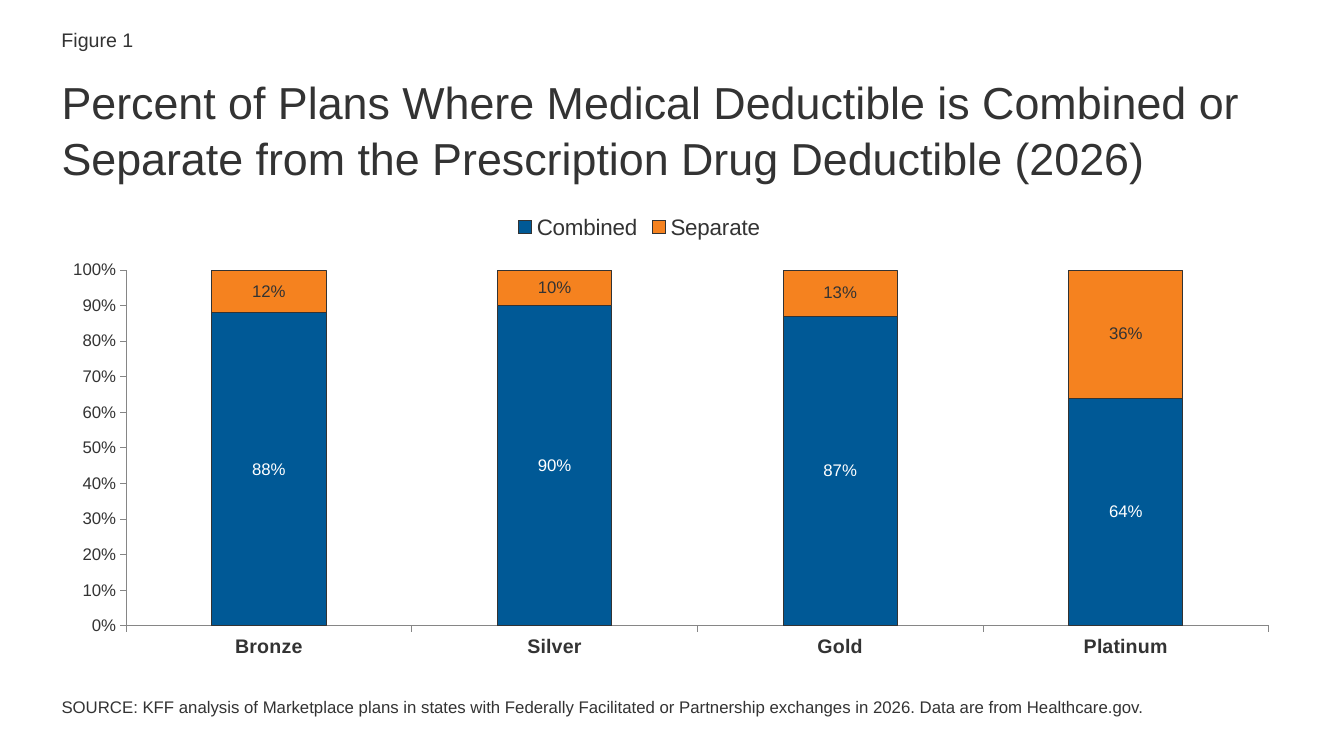
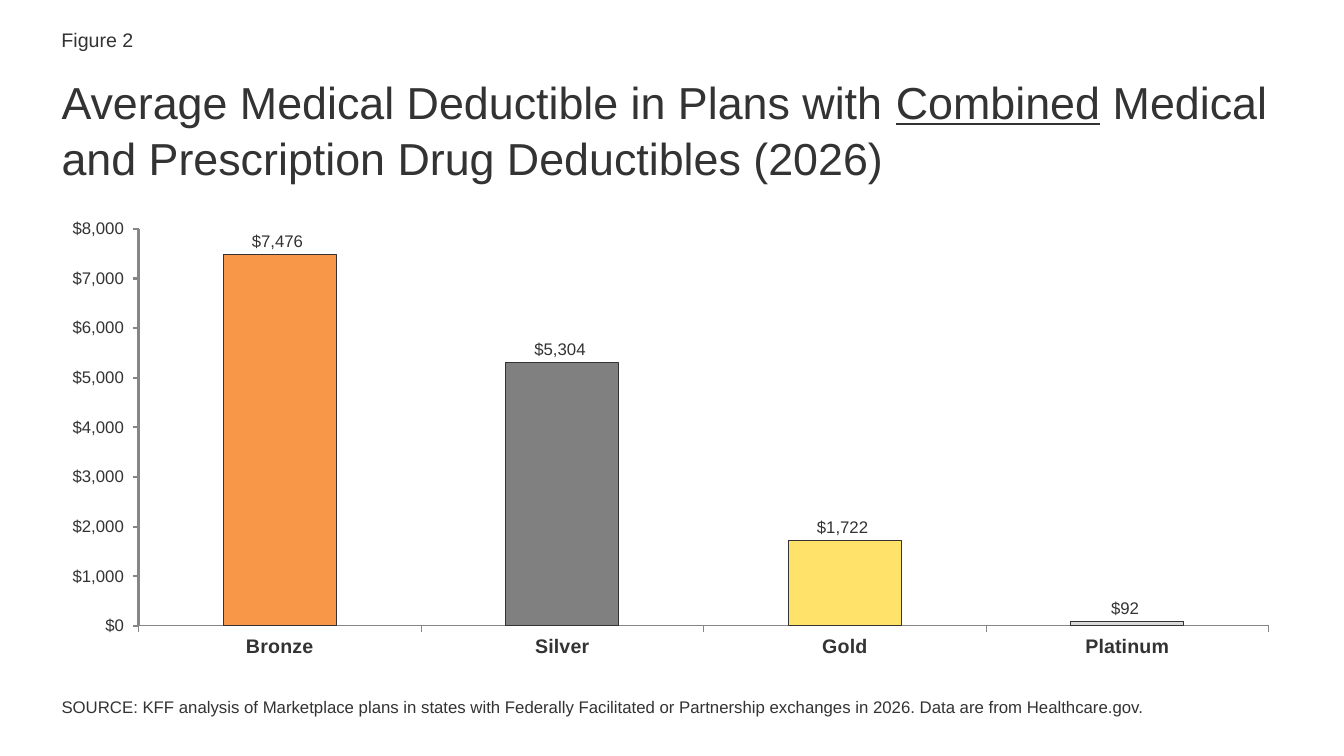
from pptx import Presentation
from pptx.chart.data import CategoryChartData
from pptx.dml.color import RGBColor
from pptx.enum.chart import XL_CHART_TYPE, XL_LABEL_POSITION, XL_LEGEND_POSITION, XL_TICK_MARK
from pptx.enum.text import MSO_ANCHOR, MSO_AUTO_SIZE, PP_ALIGN
from pptx.oxml.ns import qn
from pptx.oxml.xmlchemy import OxmlElement
from pptx.util import Cm, Pt

STACKED = XL_CHART_TYPE.COLUMN_STACKED_100
CLUSTERED = XL_CHART_TYPE.COLUMN_CLUSTERED
CENTER, ABOVE = XL_LABEL_POSITION.CENTER, XL_LABEL_POSITION.OUTSIDE_END
LEGEND_TOP = XL_LEGEND_POSITION.TOP
OUTSIDE, NO_TICK = XL_TICK_MARK.OUTSIDE, XL_TICK_MARK.NONE
TOP, MIDDLE = MSO_ANCHOR.TOP, MSO_ANCHOR.MIDDLE
NO_FIT = MSO_AUTO_SIZE.NONE
LEFT = PP_ALIGN.LEFT

INK = RGBColor(0x33, 0x33, 0x33)
WHITE = RGBColor(0xFF, 0xFF, 0xFF)
AXIS = RGBColor(0x86, 0x86, 0x86)
BLUE = RGBColor(0x00, 0x59, 0x96)
ORANGE = RGBColor(0xF5, 0x82, 0x1F)
NAVY = RGBColor(0x00, 0x3C, 0x64)
METALS = [
    RGBColor(0xF7, 0x97, 0x47),
    RGBColor(0x80, 0x80, 0x80),
    RGBColor(0xFE, 0xE2, 0x6A),
    RGBColor(0xD9, 0xD9, 0xD9),
]

FONT = "Arial"
EDGE = Cm(1.3)
WIDE = Cm(31.3)
TIERS = ["Bronze", "Silver", "Gold", "Platinum"]
PERCENT = "0%"
DOLLARS = '"$"#,##0_);[Red]\\("$"#,##0\\)'
SOURCE = (
    "SOURCE: KFF analysis of Marketplace plans in states with Federally Facilitated "
    "or Partnership exchanges in 2026. Data are from Healthcare.gov."
)


def set_font(font, size, color=INK, bold=False):
    font.name = FONT
    font.size = Pt(size)
    font.bold = bold
    font.color.rgb = color


def place(shape, top, width, height):
    shape.left, shape.top, shape.width, shape.height = EDGE, top, width, height


def style_text(shape, size, anchor):
    frame = shape.text_frame
    frame.word_wrap = True
    frame.auto_size = NO_FIT
    frame.vertical_anchor = anchor
    frame.margin_left = frame.margin_right = Cm(0.25)
    frame.margin_top = frame.margin_bottom = Cm(0.13)
    for para in frame.paragraphs:
        para.alignment = LEFT
        para.space_before = Pt(0)
        for run in para.runs:
            set_font(run.font, size)


def add_title(slide, parts):
    title = slide.shapes.title
    place(title, Cm(1.63), WIDE, Cm(2.4))
    para = title.text_frame.paragraphs[0]
    for text, lined in parts:
        run = para.add_run()
        run.text = text
        run.font.underline = lined
    style_text(title, 32, TOP)
    title.text_frame.margin_top = Cm(0.18)
    para.line_spacing = 1.05


def add_label(slide, text):
    label = slide.shapes.add_textbox(EDGE, Cm(0.56), Cm(13.1), Cm(0.9))
    label.text_frame.text = text
    style_text(label, 14, MIDDLE)


def add_source(slide):
    body = slide.placeholders[1]
    place(body, Cm(16.87), Cm(28.45), Cm(1.9))
    body.text_frame.text = SOURCE
    props = body.text_frame.paragraphs[0]._p.get_or_add_pPr()
    props.set("marL", "0")
    props.set("indent", "0")
    props.append(OxmlElement("a:buNone"))
    style_text(body, 12, MIDDLE)


def set_layout(host, index, inner=False, **spots):
    for old in host.findall(qn("c:layout")):
        host.remove(old)
    layout = OxmlElement("c:layout")
    manual = OxmlElement("c:manualLayout")
    layout.append(manual)
    pairs = [("layoutTarget", "inner")] if inner else []
    pairs += [("xMode", "edge"), ("yMode", "edge")]
    pairs += [(key, str(value)) for key, value in spots.items()]
    for tag, value in pairs:
        node = OxmlElement("c:" + tag)
        node.set("val", value)
        manual.append(node)
    host.insert(index, layout)


def style_axis(axis, size, bold=False):
    axis.has_major_gridlines = False
    axis.major_tick_mark = OUTSIDE
    axis.minor_tick_mark = NO_TICK
    axis.format.line.color.rgb = AXIS
    axis.format.line.width = Pt(0.75)
    set_font(axis.tick_labels.font, size, bold=bold)


def paint(part, color):
    part.format.fill.solid()
    part.format.fill.fore_color.rgb = color
    part.format.line.color.rgb = INK
    part.format.line.width = Pt(0.75)


def add_chart(slide, kind, rows, form, peak, step, spots):
    data = CategoryChartData(number_format=form)
    data.categories = TIERS
    for name, values, _, _ in rows:
        data.add_series(name, values)
    chart = slide.shapes.add_chart(kind, EDGE, Cm(5.31), WIDE, Cm(11.5), data).chart
    set_font(chart.font, 18)
    chart.has_title = False
    chart.has_legend = False
    style_axis(chart.category_axis, 14, bold=True)
    scale = chart.value_axis
    style_axis(scale, 12)
    scale.minimum_scale, scale.maximum_scale, scale.major_unit = 0, peak, step
    scale.tick_labels.number_format = form
    scale.tick_labels.number_format_is_linked = False
    plot = chart.plots[0]
    plot.gap_width = 150
    plot.vary_by_categories = False
    if kind == STACKED:
        plot.overlap = 100
    for series, (_, _, fill, ink) in zip(plot.series, rows):
        series.invert_if_negative = False
        paint(series, fill)
        labels = series.data_labels
        labels.show_value = True
        labels.number_format = form
        labels.number_format_is_linked = False
        labels.position = CENTER if kind == STACKED else ABOVE
        set_font(labels.font, 12, ink)
    set_layout(chart.element.find(".//" + qn("c:plotArea")), 0, True, **spots)
    return chart


def add_legend(chart):
    chart.has_legend = True
    legend = chart.legend
    legend.position = LEGEND_TOP
    legend.include_in_layout = False
    set_font(legend.font, 16)
    set_layout(chart.element.find(".//" + qn("c:legend")), 1, x=0.37, y=0)


def add_slide(deck, label, parts):
    slide = deck.slides.add_slide(deck.slide_layouts[1])
    add_label(slide, label)
    add_source(slide)
    add_title(slide, parts)
    return slide


def main():
    deck = Presentation()
    deck.slide_width, deck.slide_height = Cm(33.87), Cm(19.05)

    slide = add_slide(deck, "Figure 1", [
        ("Percent of Plans Where Medical Deductible is Combined or Separate "
         "from the Prescription Drug Deductible (2026)", False),
    ])
    rows = [
        ("Combined", [0.88, 0.9, 0.87, 0.64], BLUE, WHITE),
        ("Separate", [0.12, 0.1, 0.13, 0.36], ORANGE, INK),
    ]
    spots = {"x": 0.06, "y": 0.13, "w": 0.92, "h": 0.78}
    add_legend(add_chart(slide, STACKED, rows, PERCENT, 1, 0.1, spots))

    slide = add_slide(deck, "Figure 2", [
        ("Average Medical Deductible in Plans with ", False),
        ("Combined", True),
        (" Medical and Prescription Drug Deductibles (2026)", False),
    ])
    rows = [("Series 1", [7476, 5304, 1722, 92], NAVY, INK)]
    spots = {"x": 0.07, "y": 0.04, "w": 0.91, "h": 0.87}
    chart = add_chart(slide, CLUSTERED, rows, DOLLARS, 8000, 1000, spots)
    chart.value_axis.format.line.width = Pt(1.5)
    for index, color in enumerate(METALS):
        paint(chart.plots[0].series[0].points[index], color)

    deck.save("out.pptx")


if __name__ == "__main__":
    main()
